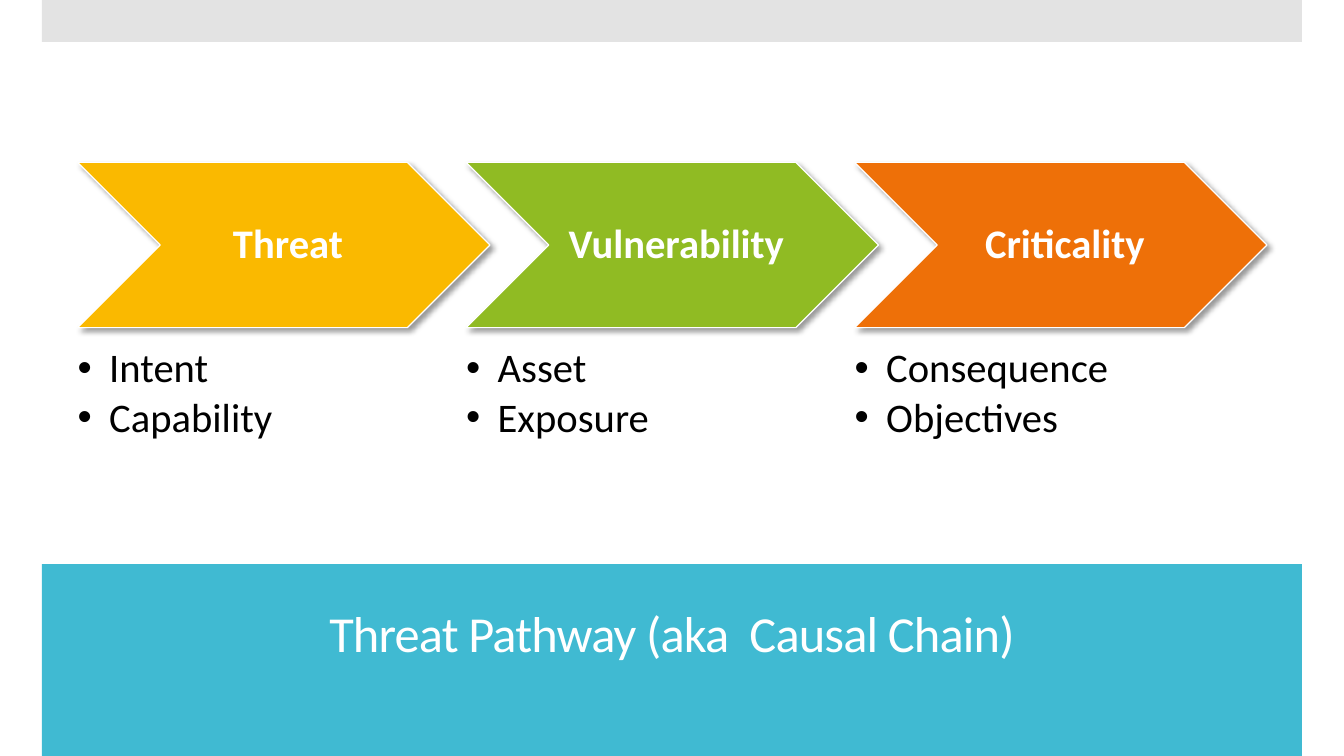
from dataclasses import dataclass

from lxml import etree
from pptx import Presentation
from pptx.dml.color import RGBColor
from pptx.enum import shapes, text
from pptx.oxml.ns import qn
from pptx.util import Pt


@dataclass(frozen=True)
class Theme:
    font: str = "Calibri"
    title_size: float = 36
    text_size: float = 29
    white: str = "FFFFFF"
    black: str = "000000"
    teal: str = "40BAD2"
    grey: str = "C8C8C8"
    yellow: str = "FAB900"
    green: str = "90BB23"
    orange: str = "EE7008"


THEME = Theme()
STAGES = [
    ("Threat", THEME.yellow, ["Intent", "Capability"]),
    ("Vulnerability", THEME.green, ["Asset", "Exposure"]),
    ("Criticality", THEME.orange, ["Consequence", "Objectives"]),
]
SLIDE_WIDTH, SLIDE_HEIGHT = 960, 540
BAND_LEFT, BAND_WIDTH = 30, 900
STAGE_LEFT, STAGE_PITCH = 55.5, 277.5


def set_values(target, values):
    for name, value in values.items():
        setattr(target, name, value)


def add_xml(parent, tag, **attributes):
    values = {name: str(value) for name, value in attributes.items()}
    return etree.SubElement(parent, qn(tag), values)


def place(left, top, width, height):
    return {"left": Pt(left), "top": Pt(top),
            "width": Pt(width), "height": Pt(height)}


def format_frame(frame, anchor, margins=(0, 0, 0, 0)):
    left, top, right, bottom = margins
    set_values(frame, {
        "word_wrap": True,
        "auto_size": text.MSO_AUTO_SIZE.NONE,
        "vertical_anchor": anchor,
        "margin_left": Pt(left), "margin_top": Pt(top),
        "margin_right": Pt(right), "margin_bottom": Pt(bottom),
    })


def write(para, words, size, color, align=text.PP_ALIGN.CENTER,
          bold=False, after=0):
    set_values(para, {"alignment": align, "line_spacing": 0.9,
                      "space_before": Pt(0), "space_after": Pt(after)})
    span = para.add_run()
    span.text = words
    set_values(span.font, {"name": THEME.font, "size": Pt(size), "bold": bold})
    span.font.color.rgb = RGBColor.from_string(color)
    return span


def add_filled(page, kind, box, color):
    shape = page.shapes.add_shape(kind, **box)
    shape.shadow.inherit = False
    shape.fill.solid()
    shape.fill.fore_color.rgb = RGBColor.from_string(color)
    shape.line.fill.background()
    return shape


def add_band(page, top, height, color):
    """Add a band behind the title."""
    box = place(BAND_LEFT, top, BAND_WIDTH, height)
    band = add_filled(page, shapes.MSO_SHAPE.RECTANGLE, box, color)
    page.shapes.title.element.addprevious(band.element)
    return band


def add_title(page, words):
    title = page.shapes.title
    set_values(title, place(50.5, 414, 859, 80.5))
    format_frame(title.text_frame, text.MSO_ANCHOR.MIDDLE)
    span = write(title.text_frame.paragraphs[0], words,
                 THEME.title_size, THEME.white)
    span.font.element.set("spc", "-60") if hasattr(span.font, "element") \
        else span._r.get_or_add_rPr().set("spc", "-60")


def add_chevron(page, left, label, color):
    chevron = add_filled(page, shapes.MSO_SHAPE.CHEVRON,
                         place(left, 116, 294.5, 118), color)
    chevron.line.color.rgb = RGBColor.from_string(THEME.white)
    chevron.line.width = Pt(0.85)
    effects = chevron.element.spPr.find(qn("a:effectLst"))
    shadow = add_xml(effects, "a:outerShdw", blurRad=Pt(4), dist=Pt(3),
                     dir=45 * 60000, algn="tl", rotWithShape=0)
    shade = add_xml(shadow, "a:srgbClr", val=THEME.black)
    add_xml(shade, "a:alpha", val=40000)
    format_frame(chevron.text_frame, text.MSO_ANCHOR.MIDDLE, (9, 3, 3, 3))
    write(chevron.text_frame.paragraphs[0], label,
          THEME.text_size, THEME.white, bold=True)


def add_list(page, left, items):
    box = page.shapes.add_textbox(**place(left, 248.5, 235.5, 69))
    frame = box.text_frame
    format_frame(frame, text.MSO_ANCHOR.TOP)
    for index, item in enumerate(items):
        para = frame.add_paragraph() if index else frame.paragraphs[0]
        write(para, item, THEME.text_size, THEME.black,
              text.PP_ALIGN.LEFT, after=4)
        layout = para._p.get_or_add_pPr()
        layout.set("marL", str(Pt(22.5)))
        layout.set("indent", str(Pt(-22.5)))
        add_xml(layout, "a:buFont", typeface="Arial")
        add_xml(layout, "a:buChar", char="•")


def main():
    deck = Presentation()
    set_values(deck, {"slide_width": Pt(SLIDE_WIDTH),
                      "slide_height": Pt(SLIDE_HEIGHT)})
    page = deck.slides.add_slide(deck.slide_layouts.get_by_name("Title Only"))
    add_band(page, 403, 137, THEME.teal)
    top_band = add_band(page, 0, 30, THEME.grey)
    add_xml(top_band.element.spPr.find(".//" + qn("a:srgbClr")),
            "a:alpha", val=50000)
    add_title(page, "Threat Pathway (aka  Causal Chain)")
    for index, (label, color, items) in enumerate(STAGES):
        left = STAGE_LEFT + index * STAGE_PITCH
        add_chevron(page, left, label, color)
        add_list(page, left, items)
    deck.save("out.pptx")


if __name__ == "__main__":
    main()
